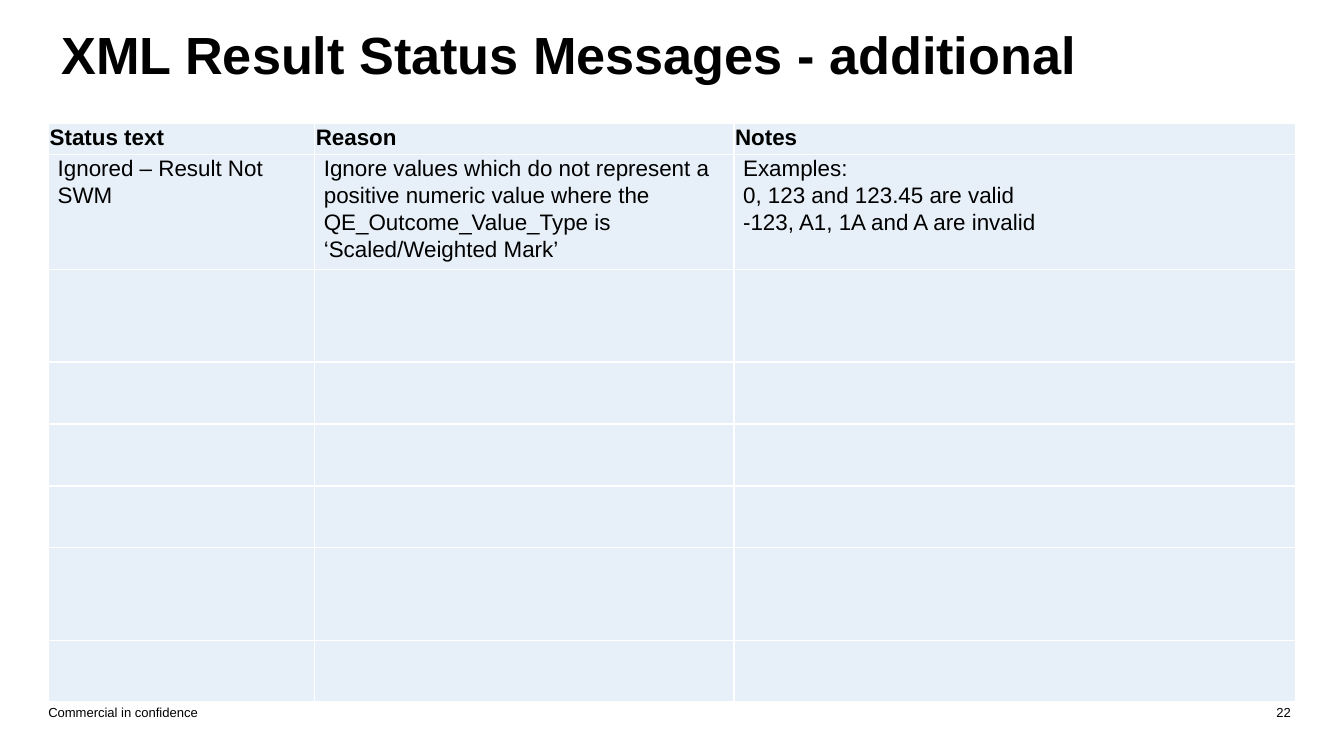
"""Build the slide that lists additional XML result status messages."""
from dataclasses import dataclass

from lxml.etree import SubElement
from pptx import Presentation
from pptx.dml.color import RGBColor as RGB
from pptx.enum.text import MSO_ANCHOR as Anchor, PP_ALIGN as Align
from pptx.oxml.ns import qn
from pptx.util import Inches, Pt


@dataclass(frozen=True)
class Theme:
    font: str = "Arial"
    ink: str = "000000"
    cell: str = "E7F0F8"
    border: str = "FFFFFF"
    border_width: float = 1
    title: float = 28
    body: float = 12
    footer: float = 7


THEME = Theme()
COLS = [1.98, 3.12, 4.18]
ROWS = [0.23, 0.69, 0.69, 0.46, 0.46, 0.46, 0.69, 0.46]
HEADER = ["Status text", "Reason", "Notes"]
MESSAGE = [
    "Ignored – Result Not SWM",
    "Ignore values which do not represent a positive numeric value where the "
    "QE_Outcome_Value_Type is ‘Scaled/Weighted Mark’",
    "Examples:\n0, 123 and 123.45 are valid\n-123, A1, 1A and A are invalid",
]


def write(tf, text, size, bold=False, align=Align.LEFT, spacing=None):
    tf.text = text
    for p in tf.paragraphs:
        p.alignment = align
        p.line_spacing = spacing
        p.font.name = THEME.font
        p.font.size = Pt(size)
        p.font.bold = bold
        p.font.color.rgb = RGB.from_string(THEME.ink)
        SubElement(p._p, qn("a:endParaRPr"), sz=str(size * 100))


def set_margins(obj, left, top, right, bottom):
    obj.margin_left, obj.margin_top = Inches(left), Inches(top)
    obj.margin_right, obj.margin_bottom = Inches(right), Inches(bottom)


def add_text(s, box, text, size, anchor, margins, **style):
    tf = s.shapes.add_textbox(*map(Inches, box)).text_frame
    tf.word_wrap = True
    tf.vertical_anchor = anchor
    set_margins(tf, *margins)
    write(tf, text, size, **style)


def style_cell(cell):
    tcPr = cell._tc.get_or_add_tcPr()
    for side in ("a:lnL", "a:lnR", "a:lnT", "a:lnB"):
        ln = SubElement(tcPr, qn(side), w=str(Pt(THEME.border_width)))
        fill = SubElement(ln, qn("a:solidFill"))
        SubElement(fill, qn("a:srgbClr"), val=THEME.border)
    cell.fill.solid()
    cell.fill.fore_color.rgb = RGB.from_string(THEME.cell)


def add_status_table(s, left, top):
    size = map(Inches, (sum(COLS), sum(ROWS)))
    table = s.shapes.add_table(
        len(ROWS), len(COLS), Inches(left), Inches(top), *size).table
    for col, width in zip(table.columns, COLS):
        col.width = Inches(width)
    for row, height in zip(table.rows, ROWS):
        row.height = Inches(height)
    for cell in table.iter_cells():
        style_cell(cell)
    for c, (heading, message) in enumerate(zip(HEADER, MESSAGE)):
        head, body = table.cell(0, c), table.cell(1, c)
        set_margins(head, 0.01, 0.01, 0.01, 0)
        write(head.text_frame, heading, THEME.body, bold=True)
        set_margins(body, 0.07, 0, 0.07, 0)
        write(body.text_frame, message, THEME.body, spacing=1.07)


def add_footer(s, left, width, text, align):
    add_text(s, (left, 5.24, width, 0.12), text, THEME.footer,
             Anchor.MIDDLE, (0, 0, 0, 0), align=align)


def main():
    prs = Presentation()
    prs.slide_width, prs.slide_height = Inches(10), Inches(10 * 9 / 16)
    s = prs.slides.add_slide(prs.slide_layouts[6])
    add_footer(s, 9.24, 0.39, "22 ", Align.RIGHT)
    add_footer(s, 0.36, 4.5, "Commercial in confidence", Align.LEFT)
    add_text(s, (0.36, 0.09, 9.25, 0.6),
             "XML Result Status Messages - additional", THEME.title,
             Anchor.BOTTOM, (0.1, 0.05, 0.1, 0.05), bold=True, spacing=0.9)
    add_status_table(s, 0.36, 0.92)
    prs.save("out.pptx")


if __name__ == "__main__":
    main()
